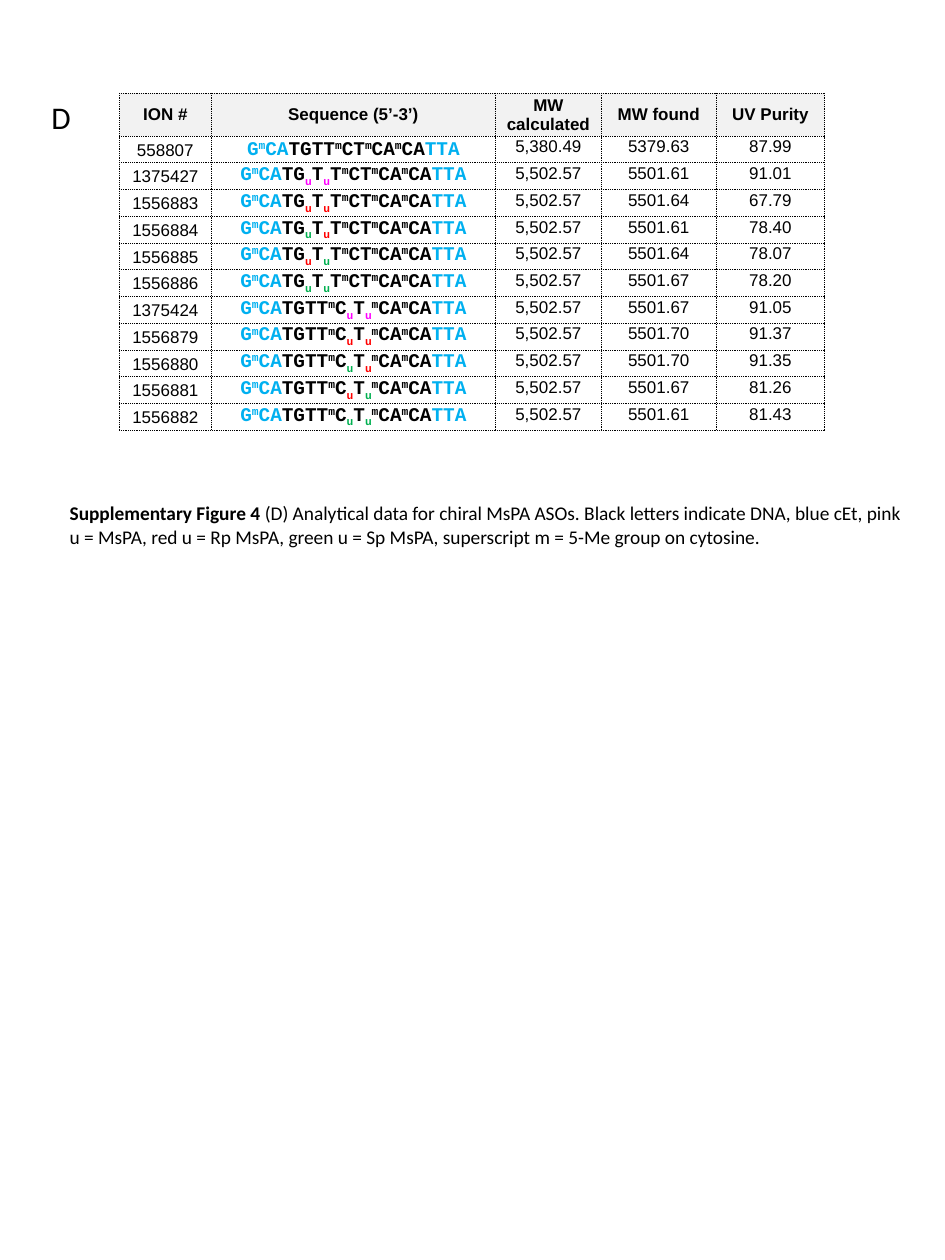
from dataclasses import dataclass
from itertools import groupby

from lxml.etree import SubElement
from pptx import Presentation
from pptx.dml.color import RGBColor
from pptx.enum.text import MSO_ANCHOR, PP_ALIGN
from pptx.oxml.ns import qn
from pptx.util import Inches, Pt


@dataclass(frozen=True)
class Theme:
    black: str = "000000"
    header_fill: str = "F2F2F2"
    blue: str = "00B0F0"
    pink: str = "FF00FF"
    red: str = "FF0000"
    green: str = "00B050"
    table_size: int = 14
    sequence_size: int = 16
    caption_size: int = 16
    letter_size: int = 26
    border_width: float = 0.75


theme = Theme()


def add_span(para, text, color, font, baseline=0):
    span = para.add_run()
    span.text = text
    for name, value in font.items():
        setattr(span.font, name, value)
    span.font.color.rgb = RGBColor.from_string(color)
    if baseline:
        span.font._element.set("baseline", str(baseline * 1000))


def format_cell(cell, margins, anchor, fill=None):
    left_right, top, bottom = margins
    layout = {"margin_left": Inches(left_right), "margin_right": Inches(left_right),
              "margin_top": Inches(top), "margin_bottom": Inches(bottom),
              "vertical_anchor": anchor}
    for name, value in layout.items():
        setattr(cell, name, value)
    properties = cell._tc.get_or_add_tcPr()
    for side in ("lnL", "lnR", "lnT", "lnB"):
        line = SubElement(properties, qn(f"a:{side}"), w=str(Pt(theme.border_width)))
        solid = SubElement(line, qn("a:solidFill"))
        SubElement(solid, qn("a:srgbClr"), val=theme.black)
        SubElement(line, qn("a:prstDash"), val="sysDot")
    if fill:
        cell.fill.solid()
        cell.fill.fore_color.rgb = RGBColor.from_string(fill)
    else:
        cell.fill.background()
    para = cell.text_frame.paragraphs[0]
    para.alignment = PP_ALIGN.CENTER
    return para


# Fonts by role
header_font = {"name": "Arial", "size": Pt(theme.table_size), "bold": True}
body_font = {**header_font, "bold": False}
sequence_font = {"name": "Courier New", "size": Pt(theme.sequence_size), "bold": True}
caption_font = {"name": "Calibri", "size": Pt(theme.caption_size), "bold": False}
letter_font = {**caption_font, "size": Pt(theme.letter_size)}

# Sequence cores: m is a raised methyl mark, u a lowered linkage
plain = "TGTTmCTmCAmCA"
near_start = "TGuTuTmCTmCAmCA"
near_middle = "TGTTmCuTumCAmCA"
linkage_colors = {"P": theme.pink, "R": theme.red, "S": theme.green}

headers = ["ION #", "Sequence (5’-3’)", "MW calculated", "MW found", "UV Purity"]
oligos = [
    ("558807", plain, "", "5,380.49", "5379.63", "87.99"),
    ("1375427", near_start, "PP", "5,502.57", "5501.61", "91.01"),
    ("1556883", near_start, "RR", "5,502.57", "5501.64", "67.79"),
    ("1556884", near_start, "SR", "5,502.57", "5501.61", "78.40"),
    ("1556885", near_start, "RS", "5,502.57", "5501.64", "78.07"),
    ("1556886", near_start, "SS", "5,502.57", "5501.67", "78.20"),
    ("1375424", near_middle, "PP", "5,502.57", "5501.67", "91.05"),
    ("1556879", near_middle, "RR", "5,502.57", "5501.70", "91.37"),
    ("1556880", near_middle, "SR", "5,502.57", "5501.70", "91.35"),
    ("1556881", near_middle, "RS", "5,502.57", "5501.67", "81.26"),
    ("1556882", near_middle, "SS", "5,502.57", "5501.61", "81.43"),
]

# Page
deck = Presentation()
deck.slide_width, deck.slide_height = Inches(10.83), Inches(14.44)
page = deck.slides.add_slide(deck.slide_layouts[6])

# Table frame
widths = [1.05, 3.26, 1.21, 1.32, 1.24]
table_height, header_height = 3.86, 0.49
table = page.shapes.add_table(len(oligos) + 1, len(headers), Inches(1.37), Inches(1.07),
                              Inches(sum(widths)), Inches(table_height)).table
table.first_row = table.horz_banding = False
for column, width in zip(table.columns, widths):
    column.width = Inches(width)
for row in table.rows:
    row.height = Inches((table_height - header_height) / len(oligos))
table.rows[0].height = Inches(header_height)

# Header row
for index, header in enumerate(headers):
    margins = (0, 0, 0) if index < 2 else (0.02, 0.01, 0.01)
    para = format_cell(table.cell(0, index), margins, MSO_ANCHOR.MIDDLE, theme.header_fill)
    add_span(para, header, theme.black, header_font)

# Oligo rows
for row, (ion, core, linkages, *measures) in enumerate(oligos, 1):
    para = format_cell(table.cell(row, 0), (0.02, 0.02, 0), MSO_ANCHOR.MIDDLE)
    add_span(para, ion, theme.black, body_font)

    para = format_cell(table.cell(row, 1), (0.01, 0.01, 0), MSO_ANCHOR.MIDDLE)
    linkage = iter(linkages)
    for part, color in (("GmCA", theme.blue), (core, theme.black), ("TTA", theme.blue)):
        for mark, letters in groupby(part, lambda letter: letter if letter in "mu" else ""):
            span_color = linkage_colors[next(linkage)] if mark == "u" else color
            baseline = {"m": 30, "u": -25}.get(mark, 0)
            add_span(para, "".join(letters), span_color, sequence_font, baseline)

    for column, measure in enumerate(measures, 2):
        para = format_cell(table.cell(row, column), (0.11, 0, 0), MSO_ANCHOR.TOP)
        para.line_spacing = 1.07
        add_span(para, measure, theme.black, body_font)

# Caption and panel letter
caption = ("(D) Analytical data for chiral MsPA ASOs. Black letters indicate DNA, blue cEt, "
           "pink u = MsPA, red u = Rp MsPA, green u = Sp MsPA, "
           "superscript m = 5-Me group on cytosine.")
texts = [
    ((0.7, 5.7, 9.74, 0.64), True,
     [("Supplementary Figure 4 ", {**caption_font, "bold": True}), (caption, caption_font)]),
    ((0.49, 1.07, 0.43, 0.54), False, [("D", letter_font)]),
]
for place, wrap, spans in texts:
    box = page.shapes.add_textbox(*map(Inches, place))
    box.text_frame.word_wrap = wrap
    for text, font in spans:
        add_span(box.text_frame.paragraphs[0], text, theme.black, font)

deck.save("out.pptx")
